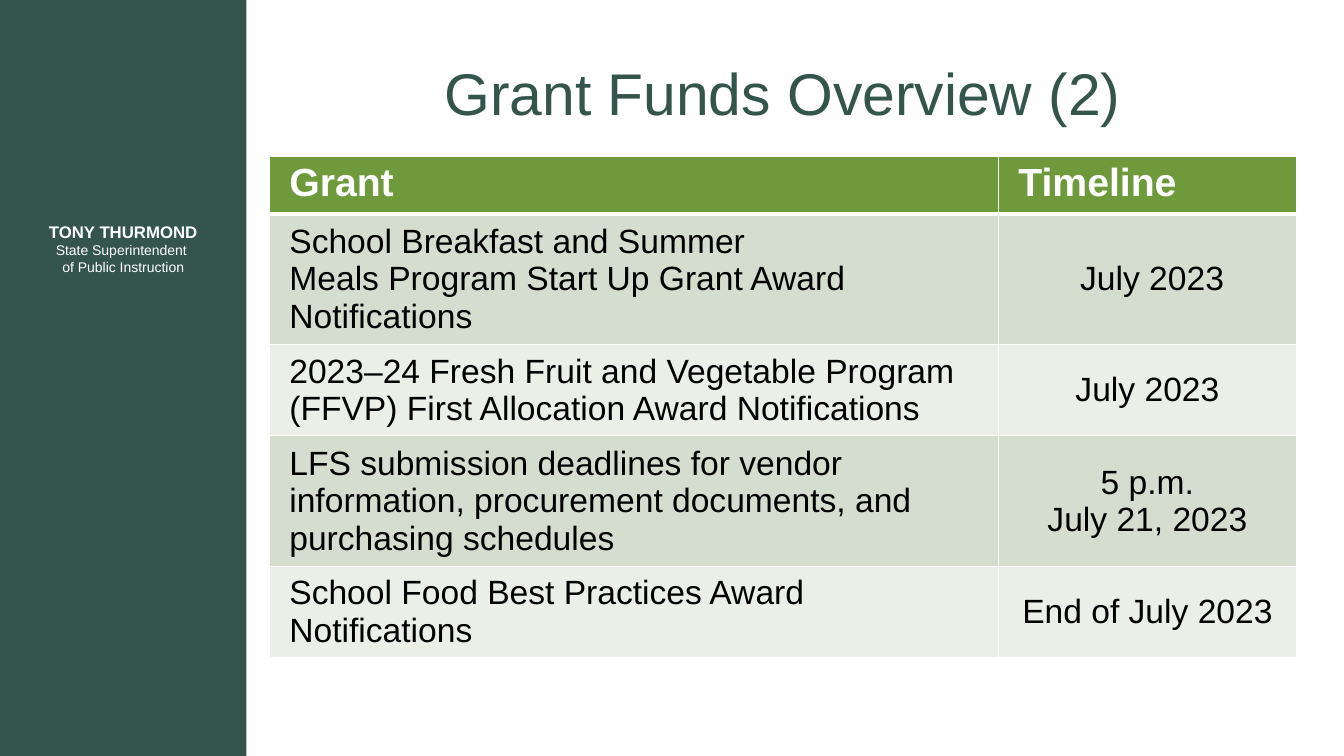
from dataclasses import dataclass

from lxml.etree import SubElement
from pptx import Presentation
from pptx.dml.color import RGBColor
from pptx.enum.shapes import MSO_SHAPE
from pptx.enum.text import MSO_ANCHOR, PP_ALIGN
from pptx.oxml.ns import qn
from pptx.slide import Slide
from pptx.table import _Cell
from pptx.text.text import TextFrame, _Paragraph
from pptx.util import Pt

FONT = "Arial"
DARK_GREEN = RGBColor(0x34, 0x55, 0x4C)
HEADER_GREEN = RGBColor(0x6E, 0x9A, 0x3B)
BAND_FILLS = (RGBColor(0xD5, 0xDE, 0xCE), RGBColor(0xEB, 0xEF, 0xE8))
WHITE = RGBColor(0xFF, 0xFF, 0xFF)
BLACK = RGBColor(0, 0, 0)

COLUMN_WIDTHS = (520.8, 213)
HEADER_HEIGHT, ROW_HEIGHT = 38.5, 63
THIN, THICK = 1, 3


@dataclass(frozen=True)
class GrantRow:
    grant: tuple[str, ...]
    timeline: tuple[str, ...]


GRANTS = (
    GrantRow(("School Breakfast and Summer\nMeals Program Start Up Grant Award Notifications",),
             (" July 2023",)),
    GrantRow(("2023–24 Fresh Fruit and Vegetable Program",
              "(FFVP) First Allocation Award Notifications"),
             ("July 2023",)),
    GrantRow(("LFS submission deadlines for vendor information, "
              "procurement documents, and purchasing schedules",),
             ("5 p.m.", "July 21, 2023")),
    GrantRow(("School Food Best Practices Award Notifications",),
             ("End of July 2023",)),
)


def add_run(p: _Paragraph, text: str, *, size: float, color: RGBColor,
            bold: bool = False) -> None:
    """Append text, turning each newline into a line break."""
    for i, part in enumerate(text.split("\n")):
        if i:
            p.add_line_break()
        r = p.add_run()
        r.text = part
        r.font.name = FONT
        r.font.size = Pt(size)
        r.font.bold = bold
        r.font.color.rgb = color


def write(tf: TextFrame, *lines: str, size: float, color: RGBColor, bold: bool = False,
          align: PP_ALIGN = PP_ALIGN.LEFT) -> None:
    """Fill the frame with one paragraph per line."""
    for i, line in enumerate(lines):
        p = tf.add_paragraph() if i else tf.paragraphs[0]
        p.alignment = align
        add_run(p, line, size=size, color=color, bold=bold)


def set_borders(cell: _Cell, top: float, bottom: float) -> None:
    tc_pr = cell._tc.get_or_add_tcPr()
    for side, width in (("L", THIN), ("R", THIN), ("T", top), ("B", bottom)):
        ln = SubElement(tc_pr, qn(f"a:ln{side}"), w=str(Pt(width)))
        fill = SubElement(ln, qn("a:solidFill"))
        SubElement(fill, qn("a:srgbClr"), val=str(WHITE))


def style_cell(cell: _Cell, fill: RGBColor, anchor: MSO_ANCHOR, *,
               top: float = THIN, bottom: float = THIN) -> None:
    set_borders(cell, top, bottom)
    cell.fill.solid()
    cell.fill.fore_color.rgb = fill
    cell.vertical_anchor = anchor
    cell.margin_left = cell.margin_right = Pt(14.4)
    cell.margin_top = cell.margin_bottom = Pt(3.6)


def add_sidebar(s: Slide) -> None:
    sp = s.shapes.add_shape(MSO_SHAPE.RECTANGLE, Pt(0), Pt(0), Pt(176), Pt(540))
    sp.shadow.inherit = False
    sp.fill.solid()
    sp.fill.fore_color.rgb = DARK_GREEN
    sp.line.fill.background()

    tf = s.shapes.add_textbox(Pt(21), Pt(150.2), Pt(134), Pt(54.7)).text_frame
    tf.word_wrap = True
    tf.vertical_anchor = MSO_ANCHOR.MIDDLE
    write(tf, "TONY THURMOND", size=12, color=WHITE, bold=True, align=PP_ALIGN.CENTER)
    add_run(tf.paragraphs[0], "\nState Superintendent \nof Public Instruction",
            size=10, color=WHITE)


def add_title(s: Slide) -> None:
    title = s.shapes.title
    title.left, title.top, title.width, title.height = Pt(199), Pt(21), Pt(720), Pt(90)
    tf = title.text_frame
    tf.vertical_anchor = MSO_ANCHOR.MIDDLE
    write(tf, "Grant Funds Overview (2)", size=42, color=DARK_GREEN, align=PP_ALIGN.CENTER)


def add_grant_table(s: Slide) -> None:
    height = HEADER_HEIGHT + ROW_HEIGHT * len(GRANTS)
    table = s.shapes.add_table(len(GRANTS) + 1, len(COLUMN_WIDTHS), Pt(192.3), Pt(111.8),
                               Pt(sum(COLUMN_WIDTHS)), Pt(height)).table
    for column, width in zip(table.columns, COLUMN_WIDTHS):
        column.width = Pt(width)
    for i, row in enumerate(table.rows):
        row.height = Pt(ROW_HEIGHT if i else HEADER_HEIGHT)

    for col, heading in enumerate(("Grant", "Timeline")):
        cell = table.cell(0, col)
        style_cell(cell, HEADER_GREEN, MSO_ANCHOR.TOP, bottom=THICK)
        write(cell.text_frame, heading, size=28, color=WHITE, bold=True)

    for i, grant_row in enumerate(GRANTS):
        columns = ((grant_row.grant, PP_ALIGN.LEFT), (grant_row.timeline, PP_ALIGN.CENTER))
        for col, (lines, align) in enumerate(columns):
            cell = table.cell(i + 1, col)
            style_cell(cell, BAND_FILLS[i % 2], MSO_ANCHOR.MIDDLE, top=THIN if i else THICK)
            write(cell.text_frame, *lines, size=24, color=BLACK, align=align)


def main() -> None:
    prs = Presentation()
    prs.slide_width, prs.slide_height = Pt(960), Pt(540)
    s = prs.slides.add_slide(prs.slide_layouts[5])
    add_sidebar(s)
    add_title(s)
    add_grant_table(s)
    prs.save("out.pptx")


if __name__ == "__main__":
    main()
